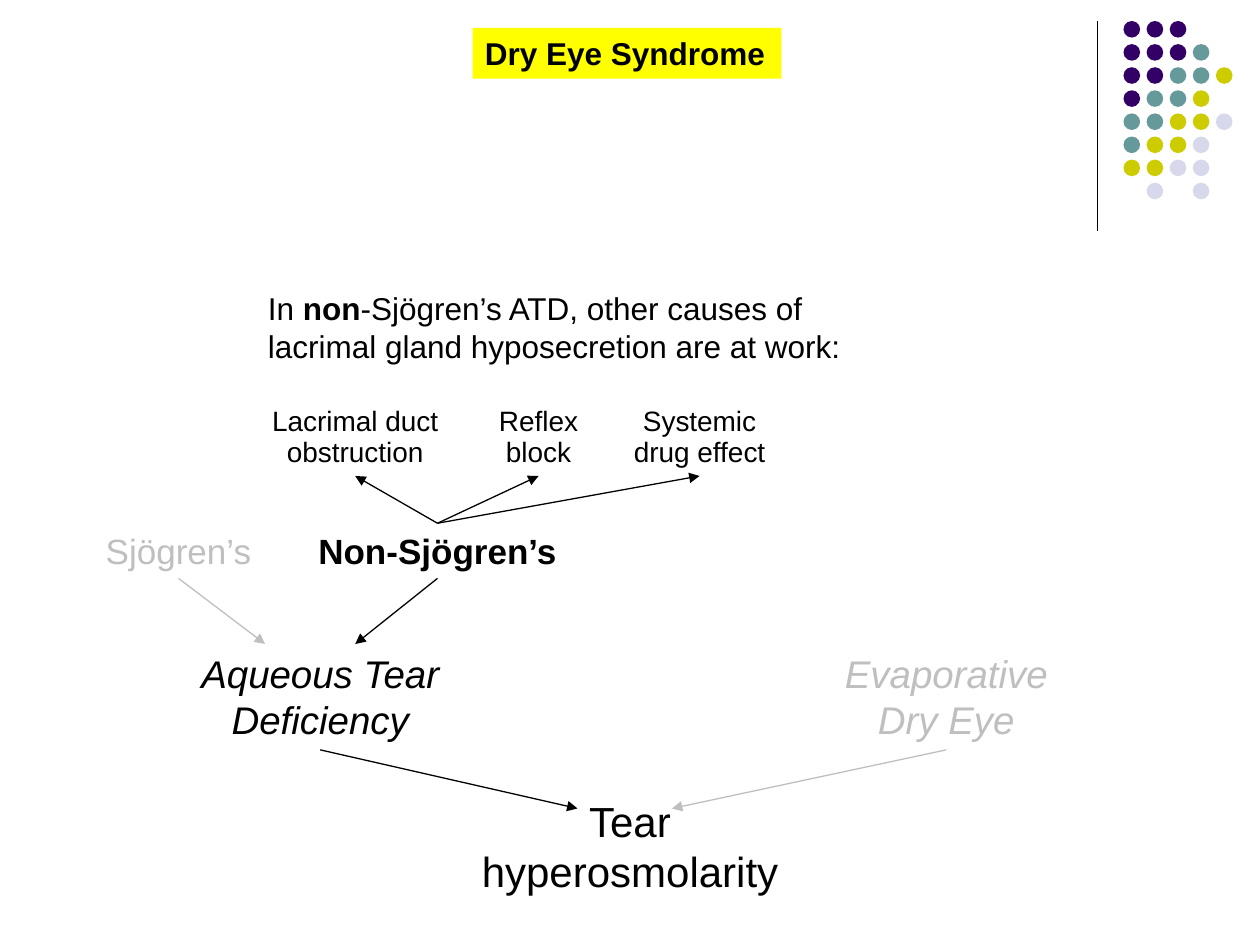
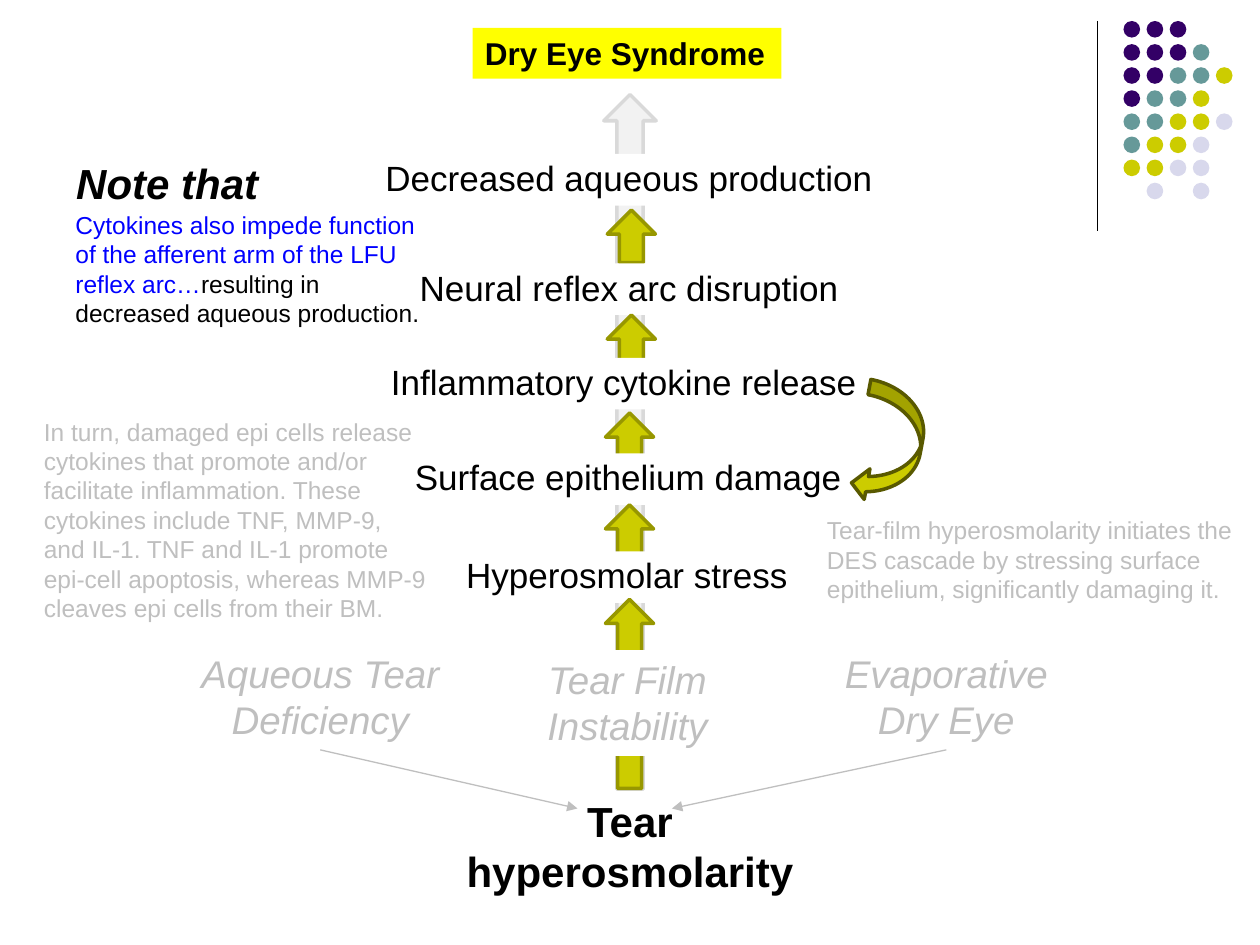
from lxml.etree import SubElement
from pptx import Presentation
from pptx.dml.color import RGBColor
from pptx.enum.shapes import MSO_CONNECTOR, MSO_SHAPE
from pptx.enum.text import MSO_ANCHOR, PP_ALIGN
from pptx.oxml.ns import qn
from pptx.util import Pt

COLORS = {
    "ink": "000000", "faded": "BFBFBF", "white": "FFFFFF", "title": "FFFF00",
    "note": "0000FF", "purple": "330066", "teal": "669999", "olive": "CCCC00",
    "lilac": "D8D8EC", "olive edge": "979700", "loop edge": "595900",
    "pale": "F2F2F2", "pale edge": "D9D9D9",
}
RGB = {name: RGBColor.from_string(value) for name, value in COLORS.items()}
FONT = "Arial"
DOT_ROWS = ["PPP", "PPPT", "PPTTO", "PTTO", "TTOOL", "TOOL", "OOLL", " L L"]
DOT_COLORS = {"P": "purple", "T": "teal", "O": "olive", "L": "lilac"}
DOT_PITCH, DOT_SIZE = 13.2, 9.5
TOP, BOTTOM = 0, 2


def add_label(slide, text, box, size, color="ink", bold=False, italic=False,
              align=PP_ALIGN.CENTER, fill=None, wrap=False, spacing=None):
    box = [Pt(length) for length in box]
    if fill:
        label = slide.shapes.add_shape(MSO_SHAPE.RECTANGLE, *box)
        label.shadow.inherit = False
        label.fill.solid()
        label.fill.fore_color.rgb = RGB[fill]
        label.line.fill.background()
    else:
        label = slide.shapes.add_textbox(*box)
    frame = label.text_frame
    frame.word_wrap = wrap
    frame.vertical_anchor = MSO_ANCHOR.TOP
    frame.text = text
    for paragraph in frame.paragraphs:
        paragraph.alignment = align
        if spacing:
            paragraph.line_spacing = Pt(spacing)
        font = paragraph.font
        font.name, font.size, font.bold, font.italic = FONT, Pt(size), bold, italic
        font.color.rgb = RGB[color]
    return label


def add_line(slide, start, end, color="ink", arrow=True):
    line = slide.shapes.add_connector(
        MSO_CONNECTOR.STRAIGHT, *[Pt(length) for length in (*start, *end)])
    line.line.color.rgb = RGB[color]
    line.line.width = Pt(0.75)
    properties = line._element.spPr
    if arrow:
        SubElement(properties.find(qn("a:ln")), qn("a:tailEnd"), type="triangle")
    SubElement(properties, qn("a:effectLst"))
    return line


presentation = Presentation()
presentation.slide_width, presentation.slide_height = Pt(720), Pt(540)
blank = presentation.slide_layouts[6]
causes_slide = presentation.slides.add_slide(blank)
cascade_slide = presentation.slides.add_slide(blank)

# Shared parts: corner dots, title and the two routes to hyperosmolarity
for slide, aqueous_color, outcome_bold in [(causes_slide, "ink", False),
                                           (cascade_slide, "faded", True)]:
    add_line(slide, (627, 12), (627, 132), arrow=False)
    dots = slide.shapes.add_group_shape()
    for row, letters in enumerate(DOT_ROWS):
        for column, letter in enumerate(letters):
            if letter == " ":
                continue
            dot = dots.shapes.add_shape(
                MSO_SHAPE.OVAL, Pt(642 + column * DOT_PITCH),
                Pt(12 + row * DOT_PITCH), Pt(DOT_SIZE), Pt(DOT_SIZE))
            dot.shadow.inherit = False
            dot.fill.solid()
            dot.fill.fore_color.rgb = RGB[DOT_COLORS[letter]]
            dot.line.fill.background()

    add_label(slide, "Dry Eye Syndrome", (270, 16, 176.5, 29), 18, bold=True,
              align=PP_ALIGN.LEFT, fill="title")
    add_label(slide, "Tear\nhyperosmolarity", (258.5, 451, 203, 65.5), 24,
              bold=outcome_bold)
    for route, left, width, color, tip in [
            ("Aqueous Tear Deficiency", 102, 162, aqueous_color, (330, 462)),
            ("Evaporative Dry Eye", 463, 155.5, "faded", (384, 462))]:
        deficiency = add_label(slide, route, (left, 368, width, 60.5), 22, color,
                               italic=True, wrap=True)
        to_outcome = add_line(slide, (left + width / 2, 428.5), tip, color)
        to_outcome.begin_connect(deficiency, BOTTOM)

# Slide 1: kinds of aqueous tear deficiency
non_sjogren = add_label(causes_slide, "Non-Sjögren’s", (174, 299, 152, 31.5), 20,
                        bold=True)
sjogren = add_label(causes_slide, "Sjögren’s", (52.5, 299, 99, 31.5), 20, "faded")
for kind, tip, color in [(sjogren, (151.5, 368), "faded"),
                         (non_sjogren, (203, 368), "ink")]:
    add_line(causes_slide, (174, 330), tip, color).begin_connect(kind, BOTTOM)

# Slide 1: other causes of hyposecretion
for text, left, width in [("Lacrimal duct\nobstruction", 147.5, 111),
                          ("Reflex\nblock", 277.5, 60.5),
                          ("Systemic\ndrug effect", 354.5, 90.5)]:
    cause = add_label(causes_slide, text, (left, 228, width, 44), 16, spacing=18)
    to_cause = add_line(causes_slide, (250, 299), (left + width / 2, 272))
    to_cause.begin_connect(non_sjogren, TOP)
    to_cause.end_connect(cause, BOTTOM)

explanation = add_label(causes_slide, "", (146, 161.5, 346.5, 51), 18,
                        align=PP_ALIGN.LEFT, wrap=True).text_frame.paragraphs[0]
for text, bold in [("In ", False), ("non", True),
                   ("-Sjögren’s ATD, other causes of lacrimal gland "
                    "hyposecretion are at work:", False)]:
    run = explanation.add_run()
    run.text, run.font.bold = text, bold

# Slide 2: cascade from top to bottom, each arrow lying under the next step
cascade = [
    (None, None, (345, 54, 30, 397)),
    ("Decreased aqueous production", (213, 88, 293, 29.5), (347, 120, 27.5, 30)),
    ("Neural reflex arc disruption", (224.5, 150.5, 270, 29.5), (347, 180, 27.5, 29.5)),
    ("Inflammatory cytokine release", (210, 204.5, 293, 29.5), (346, 236, 27.5, 29.5)),
    ("Surface epithelium damage", (224, 259, 270, 29.5), (346, 288.5, 27.5, 29.5)),
    ("Hyperosmolar stress", (258.5, 315, 199.5, 29.5), (346, 342.5, 27.5, 108)),
]
for step, step_box, arrow_box in cascade:
    if step:
        add_label(cascade_slide, step, step_box, 20, fill="white", spacing=22)
    rise = cascade_slide.shapes.add_shape(
        MSO_SHAPE.DOWN_ARROW, *[Pt(length) for length in arrow_box])
    rise.rotation = 180
    rise.shadow.inherit = False
    rise.fill.solid()
    rise.fill.fore_color.rgb = RGB["olive" if step else "pale"]
    rise.line.color.rgb = RGB["olive edge" if step else "pale edge"]
    rise.line.width = Pt(2)
add_label(cascade_slide, "Tear Film Instability", (294, 371.5, 129, 60.5), 22,
          "faded", italic=True, fill="white", wrap=True)

# Slide 2: loop from cytokines back to the epithelium
feedback = cascade_slide.shapes.add_shape(
    MSO_SHAPE.CURVED_LEFT_ARROW, Pt(491), Pt(219.5), Pt(35.5), Pt(69))
feedback.rotation = 10.6
feedback.shadow.inherit = False
feedback.fill.solid()
feedback.fill.fore_color.rgb = RGB["olive"]
feedback.line.color.rgb = RGB["loop edge"]
feedback.line.width = Pt(2)

# Slide 2: side notes
add_label(cascade_slide, "Note that", (36.5, 86.5, 119.5, 36), 24, bold=True,
          italic=True, align=PP_ALIGN.LEFT)
cytokine_note = add_label(cascade_slide, "", (36, 116.5, 219.5, 75), 14,
                          align=PP_ALIGN.LEFT, wrap=True).text_frame.paragraphs[0]
for text, color in [("Cytokines also impede function of the afferent arm of the "
                     "LFU reflex arc…", "note"),
                    ("resulting in decreased aqueous production.", "ink")]:
    run = cytokine_note.add_run()
    run.text, run.font.color.rgb = text, RGB[color]
for text, box in [
        ("In turn, damaged epi cells release cytokines that promote and/or "
         "facilitate inflammation. These cytokines include TNF, MMP-9,\vand IL-1. "
         "TNF and IL-1 promote epi-cell apoptosis, whereas MMP-9 cleaves epi cells "
         "from their BM.", (18, 234.5, 236, 126)),
        ("Tear-film hyperosmolarity initiates the DES cascade by stressing surface "
         "epithelium, significantly damaging it.", (465.5, 291, 246.5, 58))]:
    add_label(cascade_slide, text, box, 14, "faded", align=PP_ALIGN.LEFT, wrap=True)

presentation.save("out.pptx")
